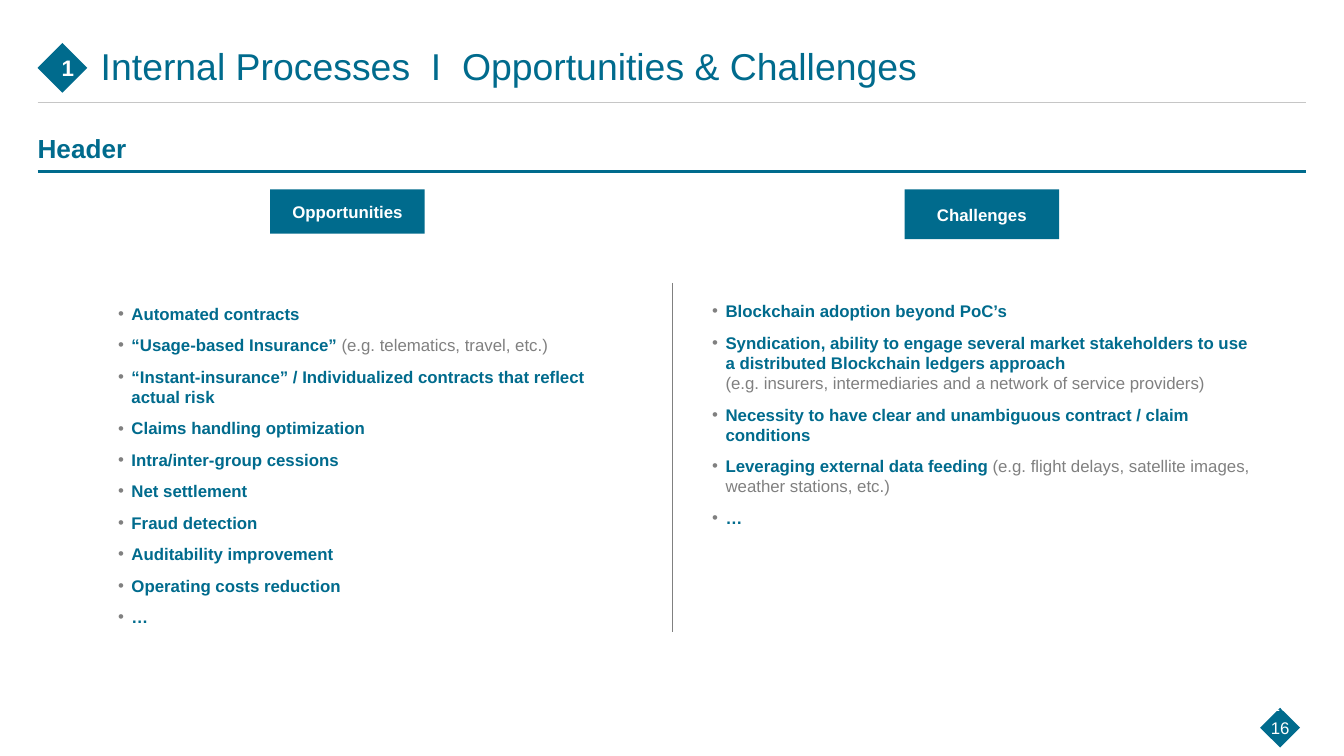
import pptx
import pptx.util
import pptx.dml.color
import pptx.enum.shapes
import pptx.enum.text
import pptx.oxml.ns
from lxml import etree

TEAL = pptx.dml.color.RGBColor(0x00, 0x6B, 0x8D)
GRAY = pptx.dml.color.RGBColor(0x80, 0x80, 0x80)
SILVER = pptx.dml.color.RGBColor(0xC6, 0xC6, 0xC6)
WHITE = pptx.dml.color.RGBColor(0xFF, 0xFF, 0xFF)

SHAPE = pptx.enum.shapes.MSO_SHAPE
ALIGN = pptx.enum.text.PP_ALIGN
ANCHOR = pptx.enum.text.MSO_ANCHOR
COLUMNS = 100

OPPORTUNITIES = [
    ("Automated contracts",),
    ("“Usage-based Insurance” ", "(e.g. telematics, travel, etc.)"),
    ("“Instant-insurance” / Individualized contracts that reflect actual risk",),
    ("Claims handling optimization",),
    ("Intra/inter-group cessions",),
    ("Net settlement",),
    ("Fraud detection",),
    ("Auditability improvement",),
    ("Operating costs reduction",),
    ("…",),
]
CHALLENGES = [
    ("Blockchain adoption beyond PoC’s",),
    ("Syndication, ability to engage several market stakeholders to use "
     "a distributed Blockchain ledgers approach \n",
     "(e.g. insurers, intermediaries and a network of service providers)"),
    ("Necessity to have clear and unambiguous contract / claim conditions",),
    ("Leveraging external data feeding ",
     "(e.g. flight delays, satellite images, weather stations, etc.)"),
    ("…",),
]


class SlideBuilder:
    font = "Arial"

    def __init__(self, prs):
        self.s = prs.slides.add_slide(prs.slide_layouts[6])
        self.unit = prs.slide_width / COLUMNS

    def grid(self, *cells):
        return [round(cell * self.unit) for cell in cells]

    def run(self, p, text, size, color, bold=False):
        r = p.add_run()
        r.text = text
        values = {"name": self.font, "size": pptx.util.Pt(size), "bold": bold}
        for name, value in values.items():
            setattr(r.font, name, value)
        r.font.color.rgb = color

    def line(self, x1, y1, x2, y2, color, width):
        c = self.s.shapes.add_connector(
            pptx.enum.shapes.MSO_CONNECTOR.STRAIGHT, *self.grid(x1, y1, x2, y2))
        c.line.color.rgb = color
        c.line.width = pptx.util.Pt(width)
        etree.SubElement(c._element.spPr, pptx.oxml.ns.qn("a:effectLst"))

    def shape(self, kind, box, text="", size=9, rotation=0):
        sp = self.s.shapes.add_shape(kind, *self.grid(*box))
        sp.shadow.inherit = False
        sp.fill.solid()
        sp.fill.fore_color.rgb = TEAL
        sp.line.fill.background()
        sp.rotation = rotation
        if text:
            tf = sp.text_frame
            tf.vertical_anchor = ANCHOR.MIDDLE
            p = tf.paragraphs[0]
            p.alignment = ALIGN.CENTER
            self.run(p, text, size, WHITE, True)

    def header_table(self, box, text):
        qn = pptx.oxml.ns.qn
        table = self.s.shapes.add_table(1, 1, *self.grid(*box)).table
        table.first_row = table.horz_banding = False
        cell = table.cell(0, 0)
        values = {"margin_left": 0, "margin_right": 0, "vertical_anchor": ANCHOR.BOTTOM}
        for name, value in values.items():
            setattr(cell, name, value)
        tcPr = cell._tc.get_or_add_tcPr()
        for side in ("L", "R", "T"):
            etree.SubElement(etree.SubElement(tcPr, qn("a:ln" + side)), qn("a:noFill"))
        border = etree.SubElement(tcPr, qn("a:lnB"), w=str(pptx.util.Pt(2)))
        fill = etree.SubElement(border, qn("a:solidFill"))
        etree.SubElement(fill, qn("a:srgbClr"), val=str(TEAL))
        cell.fill.background()
        self.run(cell.text_frame.paragraphs[0], text, 14, TEAL, True)

    def frame(self, box, **values):
        tf = self.s.shapes.add_textbox(*self.grid(*box)).text_frame
        tf.word_wrap = True
        for name, value in values.items():
            setattr(tf, name, value)
        return tf

    def label(self, box, text, size, color, align=ALIGN.LEFT, spacing=1):
        tf = self.frame(box, margin_left=0, margin_right=0, margin_top=0,
                        margin_bottom=0, vertical_anchor=ANCHOR.MIDDLE)
        p = tf.paragraphs[0]
        p.alignment = align
        p.line_spacing = spacing
        self.run(p, text, size, color)

    def bullets(self, box, items, top):
        tf = self.frame(box, margin_top=self.grid(top)[0])
        for i, parts in enumerate(items):
            p = tf.add_paragraph() if i else tf.paragraphs[0]
            self.bullet(p)
            p.space_before = pptx.util.Pt(3 if i else 0)
            p.space_after = pptx.util.Pt(3)
            for text, color, bold in zip(parts, (TEAL, GRAY), (True, False)):
                self.run(p, text.rstrip("\n"), 9, color, bold)
                if text.endswith("\n"):
                    p.add_line_break()

    def bullet(self, p):
        qn = pptx.oxml.ns.qn
        pPr = p._p.get_or_add_pPr()
        indent = self.grid(1)[0]
        pPr.set("marL", str(indent))
        pPr.set("indent", str(-indent))
        color = etree.SubElement(pPr, qn("a:buClr"))
        etree.SubElement(color, qn("a:srgbClr"), val=str(GRAY))
        etree.SubElement(pPr, qn("a:buFont"), typeface=self.font)
        etree.SubElement(pPr, qn("a:buChar"), char="•")


def main():
    prs = pptx.Presentation()
    prs.slide_width = pptx.util.Inches(10)
    prs.slide_height = prs.slide_width * 9 // 16
    b = SlideBuilder(prs)
    left, right = 2.8, 97.2

    b.shape(SHAPE.RECTANGLE, (94.2, 53.1, 2.1, 2.1), rotation=44.9)
    b.line(left, 7.65, right, 7.65, SILVER, 0.5)
    for top in (51.7, 53.4):
        b.label((93.3, top, 3.9, 1.5), "16", 9, WHITE, ALIGN.CENTER)

    b.shape(SHAPE.DIAMOND, (left, 3.2, 3.7, 3.7), "1", 12)
    b.label((7.5, 2.9, 89.7, 4.4),
            "Internal Processes  I  Opportunities & Challenges", 20, TEAL, spacing=0.9)
    b.header_table((left, 9.4, right - left, 3.3), "Header")

    b.bullets((52, 22.1, 42.1, 19.3), CHALLENGES, 0.3)
    b.shape(SHAPE.RECTANGLE, (20.1, 14.1, 11.5, 3.3), "Opportunities")
    b.shape(SHAPE.RECTANGLE, (67.3, 14.1, 11.5, 3.7), "Challenges")
    b.line(50, 21.05, 50, 47.05, GRAY, 0.5)
    b.bullets((7.8, 22.1, 40.2, 25.2), OPPORTUNITIES, 0.5)

    prs.save("out.pptx")


if __name__ == "__main__":
    main()
